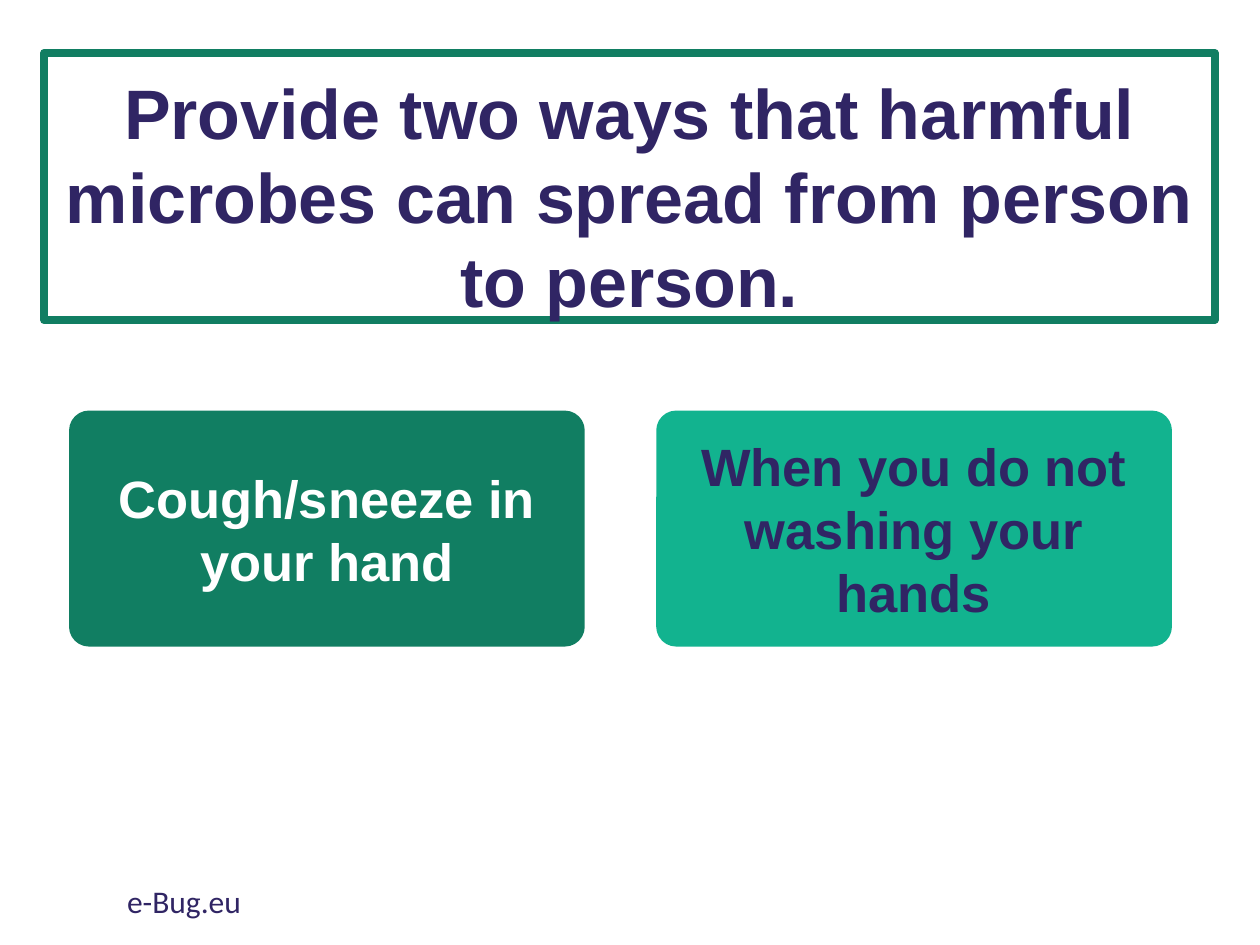
from pptx import Presentation
from pptx.dml.color import RGBColor
from pptx.enum import shapes, text
from pptx.util import Inches, Pt

QUESTION = "Provide two ways that harmful microbes can spread from person to person."
ANSWERS = [
    ("Cough/sneeze in your hand", "green", "white"),
    ("When you do not washing your hands", "mint", "navy"),
]
FOOTER = "e-Bug.eu"

COLOURS = {"green": "117E62", "mint": "12B38F", "navy": "302564", "white": "FFFFFF"}
CARD_LEFT, CARD_TOP, CARD_WIDTH, CARD_HEIGHT = 0.58, 3.29, 4.03, 1.81
CARD_STEP = 4.66


def colour(name):
    return RGBColor.from_string(COLOURS[name])


def outline(shape, name):
    shape.line.color.rgb = colour(name)
    shape.line.width = Pt(4.5)


def write(shape, words, size, name, font="Arial", bold=True,
          align=text.PP_ALIGN.CENTER, anchor=text.MSO_ANCHOR.MIDDLE):
    frame = shape.text_frame
    frame.word_wrap = True
    frame.auto_size = text.MSO_AUTO_SIZE.NONE
    frame.vertical_anchor = anchor
    paragraph = frame.paragraphs[0]
    paragraph.text = words
    paragraph.alignment = align
    paragraph.font.name = font
    paragraph.font.size = Pt(size)
    paragraph.font.bold = bold
    paragraph.font.color.rgb = colour(name)


def main():
    deck = Presentation()
    deck.slide_width, deck.slide_height = Inches(10), Inches(7.5)
    page = deck.slides.add_slide(deck.slide_layouts[5])

    title = page.shapes.title
    title.left, title.top = Inches(0.35), Inches(0.42)
    title.width, title.height = Inches(9.29), Inches(2.12)
    outline(title, "green")
    write(title, QUESTION, 40, "navy", anchor=text.MSO_ANCHOR.TOP)
    title.text_frame.margin_top = Inches(0.13)

    for index, (words, fill, ink) in enumerate(ANSWERS):
        card = page.shapes.add_shape(
            shapes.MSO_SHAPE.ROUNDED_RECTANGLE,
            Inches(CARD_LEFT + index * CARD_STEP), Inches(CARD_TOP),
            Inches(CARD_WIDTH), Inches(CARD_HEIGHT))
        card.adjustments[0] = 0.07
        card.shadow.inherit = False
        card.fill.solid()
        card.fill.fore_color.rgb = colour(fill)
        outline(card, fill)
        write(card, words, 30, ink)

    footer = page.shapes.add_textbox(Inches(0.91), Inches(6.95), Inches(3.38), Inches(0.4))
    write(footer, FOOTER, 18, "navy", "Calibri", False,
          text.PP_ALIGN.LEFT, text.MSO_ANCHOR.TOP)

    deck.save("out.pptx")


if __name__ == "__main__":
    main()
